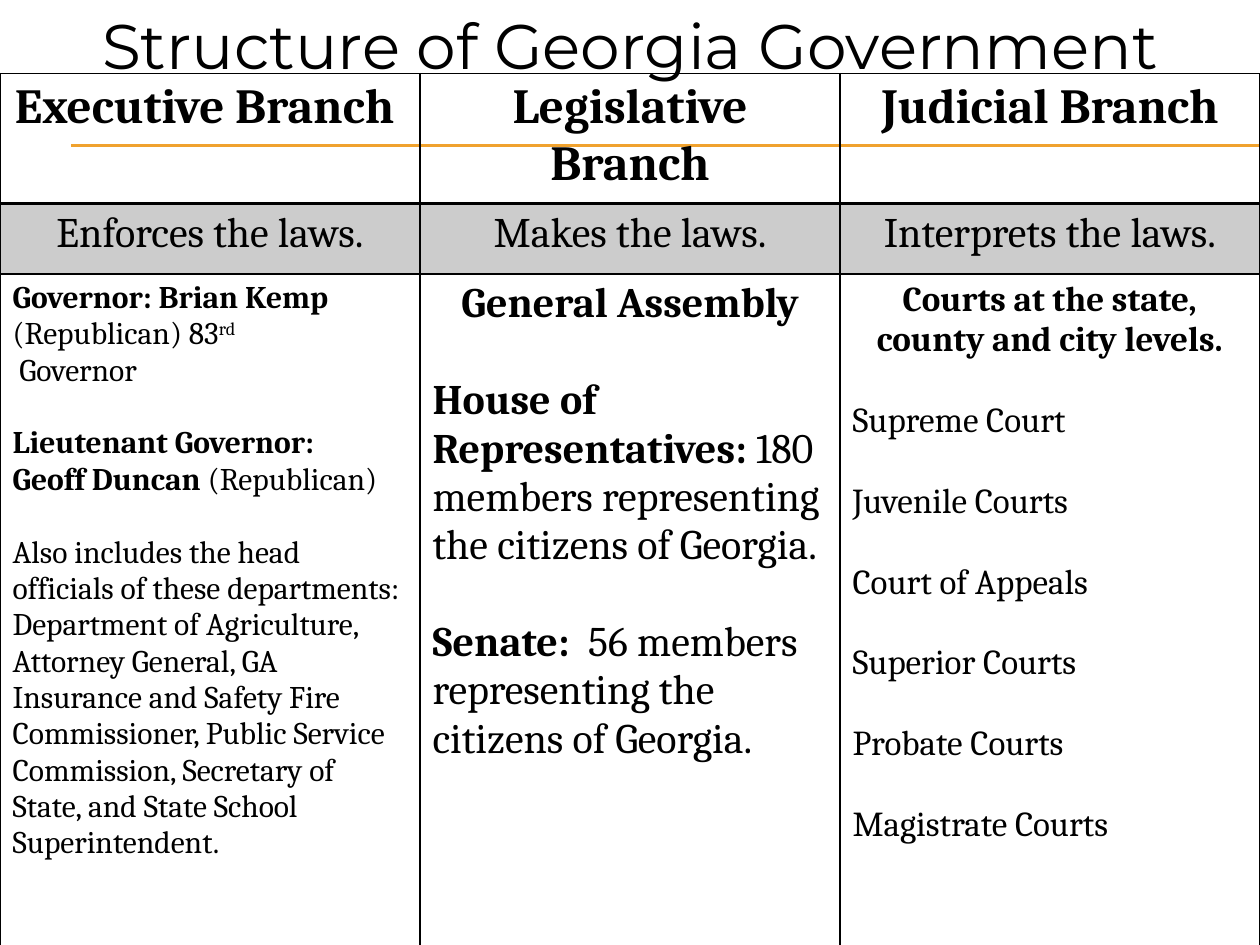
from lxml.etree import SubElement
from pptx import Presentation
from pptx.dml.color import RGBColor
from pptx.enum.shapes import MSO_CONNECTOR as Connector
from pptx.enum.text import MSO_ANCHOR as Anchor, MSO_AUTO_SIZE as AutoSize, PP_ALIGN as Align
from pptx.oxml.ns import qn
from pptx.util import Pt

BLACK = RGBColor(0x00, 0x00, 0x00)
GOLD = RGBColor(0xF0, 0xA2, 0x2E)
SERIF, SANS = "Cambria", "Montserrat"
PAGE_WIDTH, PAGE_HEIGHT = 720, 540
ROW_HEIGHTS = (74, 40, 439)
LINE_HEIGHT = 1.155

HEADINGS = ("Executive Branch ", "Legislative Branch", "Judicial Branch")
DUTIES = ("Enforces the laws.", "Makes the laws.", "Interprets the laws.")
COURTS = ("Supreme Court", "Juvenile Courts", "Court of Appeals",
          "Superior Courts", "Probate Courts", "Magistrate Courts")

BOLD, PLAIN, RAISED = {"bold": True}, {"bold": False}, {"bold": False, "raised": True}
GAP, CENTERED = {"gap": True}, {"align": Align.CENTER}

EXECUTIVE = [
    ({}, [("Governor: Brian Kemp ", BOLD), ("(Republican) 83", PLAIN), ("rd", RAISED)]),
    ({}, [(" Governor", PLAIN)]),
    (GAP, [("Lieutenant Governor:", BOLD)]),
    ({}, [("Geoff Duncan ", BOLD), ("(Republican)", PLAIN)]),
    (GAP, [("Also includes the head officials of these departments:", PLAIN)]),
    ({}, [("Department of Agriculture, Attorney General, GA Insurance and Safety Fire "
           "Commissioner, Public Service Commission, Secretary of State, and State "
           "School Superintendent.", PLAIN)]),
]
LEGISLATIVE = [
    (CENTERED, [("General Assembly", BOLD)]),
    (GAP, [("House of Representatives: ", BOLD),
           ("180 members representing the citizens of Georgia.", PLAIN)]),
    (GAP, [("Senate:", BOLD), ("  56 members representing the citizens of Georgia.", PLAIN)]),
]
JUDICIAL = [
    (CENTERED, [("Courts at the state, county and city levels.", BOLD)]),
    *[(GAP, [(court, PLAIN)]) for court in COURTS],
]


def set_font(span, name, size, bold=False):
    font = span.font
    for key, value in {"name": name, "size": Pt(size), "bold": bold}.items():
        setattr(font, key, value)
    font.color.rgb = BLACK


def add_rules(page, left, top, width):
    for offset in (0, 0.7):
        y = Pt(top + offset)
        rule = page.shapes.add_connector(Connector.STRAIGHT, Pt(left), y, Pt(left + width), y)
        rule.line.color.rgb = GOLD
        rule.line.width = Pt(0.75)
        SubElement(rule.element.spPr, qn("a:effectLst"))


def add_title(page, left, top, width, height):
    box = page.shapes.title
    place = {"left": left, "top": top, "width": width, "height": height}
    for key, value in place.items():
        setattr(box, key, Pt(value))
    frame = box.text_frame
    layout = {"word_wrap": True, "auto_size": AutoSize.SHAPE_TO_FIT_TEXT,
              "vertical_anchor": Anchor.TOP}
    for key, value in layout.items():
        setattr(frame, key, value)
    para = frame.paragraphs[0]
    para.alignment = Align.CENTER
    span = para.add_run()
    span.text = "Structure of Georgia Government"
    set_font(span, SANS, 36)


def set_borders(cell, widths):
    properties = cell._tc.get_or_add_tcPr()
    for side, width in widths.items():
        edge = SubElement(properties, qn(f"a:ln{side}"), w=str(Pt(width)))
        fill = SubElement(edge, qn("a:solidFill"))
        SubElement(fill, qn("a:srgbClr"), val=str(BLACK))


def shade(cell, percent):
    cell.fill.solid()
    cell.fill.fore_color.rgb = BLACK
    color = cell._tc.tcPr.find(qn("a:solidFill")).find(qn("a:srgbClr"))
    SubElement(color, qn("a:alpha"), val=str(percent * 1000))


def write_cell(cell, paragraphs, size):
    frame = cell.text_frame
    for index, (style, spans) in enumerate(paragraphs):
        para = frame.add_paragraph() if index else frame.paragraphs[0]
        para.alignment = style.get("align", Align.LEFT)
        if style.get("gap"):
            para.space_before = Pt(round(size * LINE_HEIGHT, 2))
        for text, look in spans:
            span = para.add_run()
            span.text = text
            set_font(span, SERIF, size, look["bold"])
            if look.get("raised"):
                span.font._element.set("baseline", "30000")


def add_branches(page, left, top, width, height):
    headings = [[(CENTERED, [(text, BOLD)])] for text in HEADINGS]
    duties = [[(CENTERED, [(text, PLAIN)])] for text in DUTIES]
    rows = [
        (headings, (28, 28, 28)),
        (duties, (24, 24, 24)),
        ((EXECUTIVE, LEGISLATIVE, JUDICIAL), (18, 24, 20)),
    ]
    frame = page.shapes.add_table(len(rows), len(HEADINGS),
                                  Pt(left), Pt(top), Pt(width), Pt(height))
    table = frame.table
    table.first_row = table.horz_banding = False
    for column in table.columns:
        column.width = Pt(width / len(HEADINGS))
    for row_index, (contents, sizes) in enumerate(rows):
        row = table.rows[row_index]
        row.height = Pt(ROW_HEIGHTS[row_index])
        widths = {"L": 1, "R": 1, "T": 2 if row_index == 1 else 1,
                  "B": 2 if row_index == 0 else 1}
        for cell, paragraphs, size in zip(row.cells, contents, sizes):
            set_borders(cell, widths)
            if row_index == 1:
                shade(cell, 20)
            else:
                cell.fill.background()
            write_cell(cell, paragraphs, size)


def main():
    deck = Presentation()
    deck.slide_width, deck.slide_height = Pt(PAGE_WIDTH), Pt(PAGE_HEIGHT)
    page = deck.slides.add_slide(deck.slide_layouts[5])
    add_rules(page, 40.5, 82.8, PAGE_WIDTH - 40.5)
    add_title(page, 0, 0, PAGE_WIDTH, 51)
    add_branches(page, 0, 42, PAGE_WIDTH, sum(ROW_HEIGHTS))
    deck.save("out.pptx")


if __name__ == "__main__":
    main()
